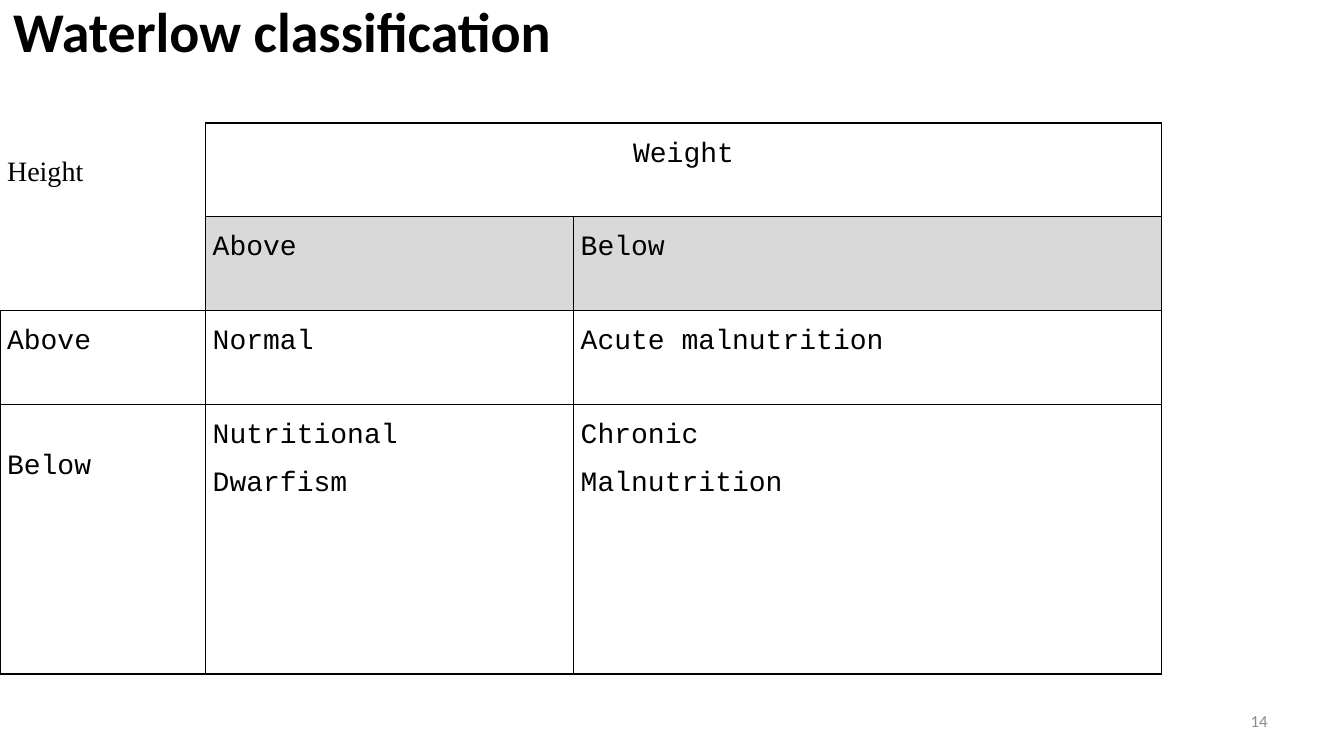
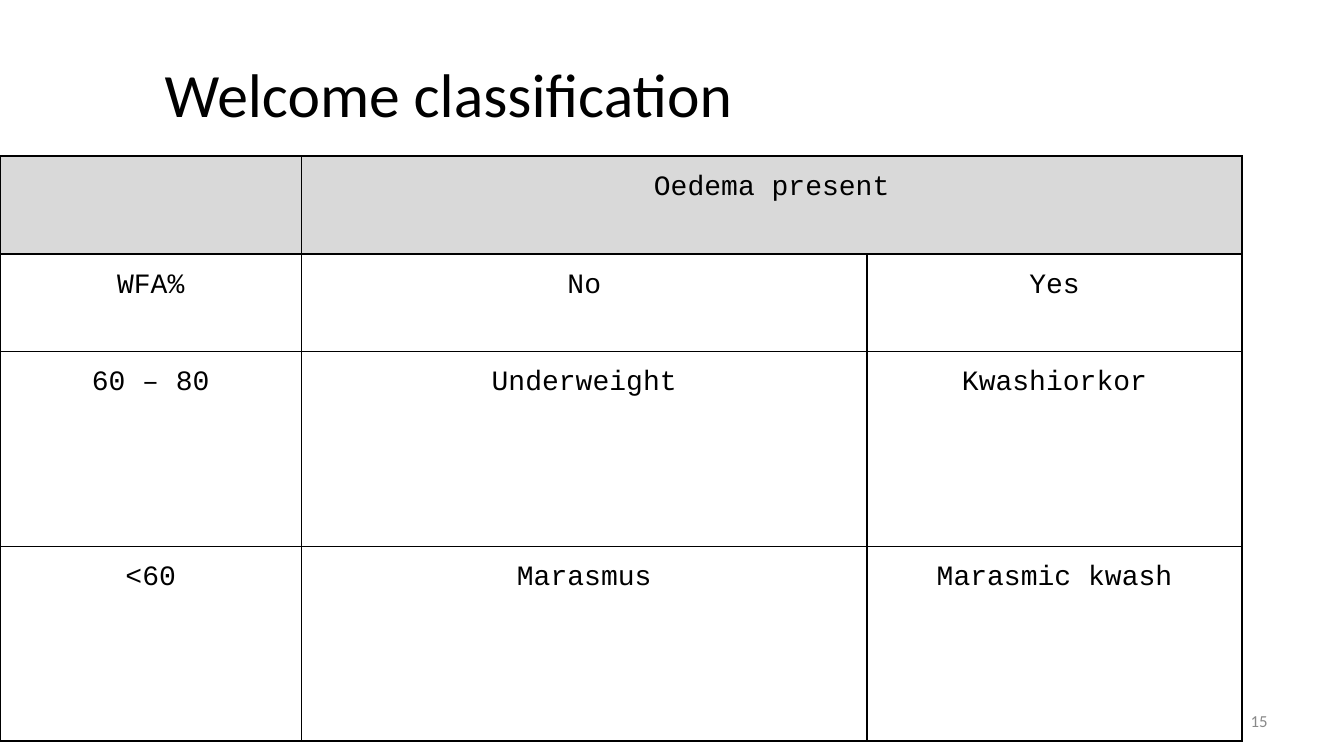
import pptx
import pptx.util
import pptx.dml.color
import pptx.enum.text
import pptx.oxml
import pptx.oxml.ns

Inches = pptx.util.Inches
Pt = pptx.util.Pt
ALIGN = pptx.enum.text.PP_ALIGN
ANCHOR = pptx.enum.text.MSO_ANCHOR

COLORS = {"ink": "000000", "page_number": "898989", "header": "D9D9D9"}
TITLE_FONT = "Calibri"
CELL_FORMAT = {"font": "Courier New", "align": ALIGN.JUSTIFY, "spacing": 1.5}
CELL_LAYOUT = {
    "margin_left": Inches(0.07),
    "margin_right": Inches(0.07),
    "margin_top": 0,
    "margin_bottom": 0,
    "vertical_anchor": ANCHOR.TOP,
}
OUTER_LINE, INNER_LINE = 1.5, 1
TITLE_ONLY_LAYOUT = 5


def set_attributes(target, values):
    for name, value in values.items():
        setattr(target, name, value)


def add_span(para, text, size, font=TITLE_FONT, color="ink", bold=False):
    span = para.add_run()
    span.text = text
    set_attributes(span.font, {"size": Pt(size), "name": font, "bold": bold})
    span.font.color.rgb = pptx.dml.color.RGBColor.from_string(COLORS[color])


def add_title(page, text, place, align, size, bold=False, inset=0):
    title = page.shapes.title
    sides = ("left", "top", "width", "height")
    set_attributes(title, dict(zip(sides, map(Inches, place))))
    set_attributes(title.text_frame, {
        "margin_left": Inches(inset),
        "margin_top": 0,
        "margin_bottom": 0,
        "vertical_anchor": ANCHOR.MIDDLE,
        "word_wrap": True,
        "auto_size": pptx.enum.text.MSO_AUTO_SIZE.NONE,
    })
    para = title.text_frame.paragraphs[0]
    para.alignment = align
    add_span(para, text, size, bold=bold)


def add_page_number(page, number):
    box = page.shapes.add_textbox(
        Inches(9.56), Inches(6.95), Inches(3.11), Inches(0.4))
    set_attributes(box.text_frame,
                   {"word_wrap": True, "vertical_anchor": ANCHOR.MIDDLE})
    para = box.text_frame.paragraphs[0]
    para.alignment = ALIGN.RIGHT
    add_span(para, str(number), 12, color="page_number")


def set_borders(cell, widths):
    """Draw the given sides (L, R, T, B) in points; a width of 0 hides one."""
    properties = cell._tc.get_or_add_tcPr()
    for position, (side, width) in enumerate(widths.items()):
        paint = (f'<a:solidFill><a:srgbClr val="{COLORS["ink"]}"/></a:solidFill>'
                 if width else "<a:noFill/>")
        line = pptx.oxml.parse_xml(
            f'<a:ln{side} {pptx.oxml.ns.nsdecls("a")} w="{Pt(width)}">'
            f'{paint}</a:ln{side}>')
        properties.insert(position, line)


def fill_cell(cell, text, style, shaded):
    set_attributes(cell, {**CELL_LAYOUT, **style.get("layout", {})})
    if shaded:
        cell.fill.solid()
        cell.fill.fore_color.rgb = pptx.dml.color.RGBColor.from_string(
            COLORS["header"])
    else:
        cell.fill.background()
    look = {**CELL_FORMAT, **style}
    for index, line in enumerate(text.split("\n") if text else []):
        frame = cell.text_frame
        para = frame.add_paragraph() if index else frame.paragraphs[0]
        set_attributes(para, {"alignment": look["align"],
                              "line_spacing": look["spacing"]})
        add_span(para, line, 20, look["font"])


def add_grid(page, top, columns, heights, rows, align, shaded, styles=None,
             open_cells=()):
    """Add a ruled table whose first row spans its last two columns."""
    frame = page.shapes.add_table(
        len(rows), len(columns), 0, Inches(top),
        Inches(sum(columns)), Inches(sum(heights)))
    table = frame.table
    set_attributes(table, {"first_row": False, "horz_banding": False})
    for column, width in zip(table.columns, columns):
        column.width = Inches(width)
    for row, height in zip(table.rows, heights):
        row.height = Inches(height)
    table.cell(0, 1).merge(table.cell(0, 2))

    last_row, last_column = len(rows) - 1, len(columns) - 1
    for r, texts in enumerate(rows):
        for c, text in enumerate(texts):
            cell = table.cell(r, c)
            style = {"align": align, **(styles or {}).get((r, c), {})}
            fill_cell(cell, text, style, (r, c) in shaded)
            spanned = cell.is_spanned
            ends_row = c == last_column or cell.is_merge_origin
            widths = {
                "L": 0 if spanned else INNER_LINE if c else OUTER_LINE,
                "R": OUTER_LINE if ends_row else INNER_LINE,
                "T": INNER_LINE if r else OUTER_LINE,
                "B": OUTER_LINE if r == last_row else INNER_LINE,
            }
            if (r, c) in open_cells:
                widths.update(L=0, T=0)
                if (r + 1, c) in open_cells:
                    widths["B"] = 0
            set_borders(cell, widths)


def add_page(deck, number):
    page = deck.slides.add_slide(deck.slide_layouts[TITLE_ONLY_LAYOUT])
    add_page_number(page, number)
    return page


def add_waterlow_page(deck):
    page = add_page(deck, 14)
    add_title(page, "Waterlow classification", (0, 0, 9, 0.6),
              ALIGN.LEFT, 40, bold=True, inset=0.13)
    add_grid(
        page, 1.22, [2.04, 3.65, 5.83], [0.93, 0.93, 0.93, 2.68],
        [["Height", "Weight", ""],
         ["", "Above", "Below"],
         ["Above", "Normal", "Acute malnutrition"],
         ["Below", "Nutritional\nDwarfism", "Chronic\nMalnutrition"]],
        ALIGN.JUSTIFY,
        shaded={(1, 1), (1, 2)},
        styles={
            (0, 0): {"font": "Times New Roman", "align": ALIGN.LEFT,
                     "spacing": 1.15,
                     "layout": {"vertical_anchor": ANCHOR.MIDDLE}},
            (0, 1): {"align": ALIGN.CENTER},
            (3, 0): {"layout": {"margin_top": Inches(0.31)}},
        },
        open_cells={(0, 0), (1, 0)})


def add_welcome_page(deck):
    page = add_page(deck, 15)
    add_title(page, "Welcome classification", (0, 0.3, 9, 1.25),
              ALIGN.CENTER, 44)
    add_grid(
        page, 1.55, [2.99, 5.61, 3.72], [0.97, 0.97, 1.93, 1.93],
        [["", "Oedema present", ""],
         ["WFA%", "No", "Yes"],
         ["60 – 80", "Underweight", "Kwashiorkor"],
         ["<60", "Marasmus", "Marasmic kwash"]],
        ALIGN.CENTER,
        shaded={(0, 0), (0, 1), (0, 2)})


def main():
    deck = pptx.Presentation()
    set_attributes(deck, {"slide_width": Inches(13.33),
                          "slide_height": Inches(7.5)})
    add_waterlow_page(deck)
    add_welcome_page(deck)
    deck.save("out.pptx")


if __name__ == "__main__":
    main()
